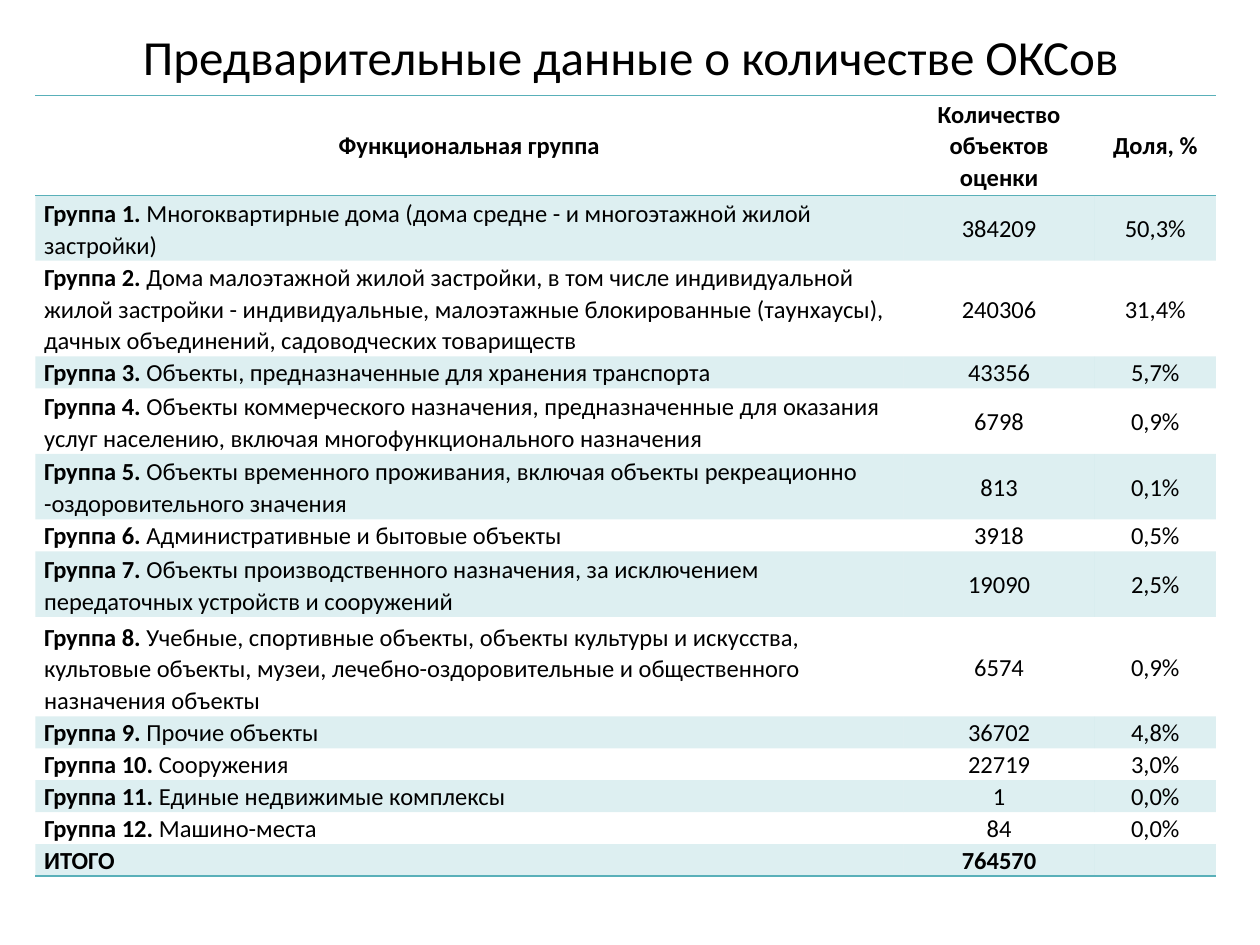
from lxml import etree
from pptx import Presentation
from pptx.dml.color import RGBColor
from pptx.enum.text import MSO_ANCHOR, PP_ALIGN
from pptx.oxml.ns import qn
from pptx.util import Inches, Pt

CENTER, LEFT = PP_ALIGN.CENTER, PP_ALIGN.LEFT
MIDDLE, BOTTOM = MSO_ANCHOR.MIDDLE, MSO_ANCHOR.BOTTOM
COLORS = {"text": "000000", "accent": "59B0B9"}
PLAIN_TABLE_STYLE = "{2D5ABB26-0587-4C30-8999-92F81FD0307C}"
TITLE_ONLY = 5

COLUMN_WIDTHS = [6.89, 1.52, 0.96]
HEADINGS = ["Функциональная группа", "Количество объектов оценки", "Доля, %"]
HEADING_HEIGHT = 0.79
ROW_HEIGHT = 0.25
GROUPS = [
    ("Многоквартирные дома (дома средне - и многоэтажной жилой застройки)", "384209", "50,3%", 0.52),
    ("Дома малоэтажной жилой застройки, в том числе индивидуальной жилой застройки - "
     "индивидуальные, малоэтажные блокированные (таунхаусы), дачных объединений, "
     "садоводческих товариществ", "240306", "31,4%", 0.76),
    ("Объекты, предназначенные для хранения транспорта", "43356", "5,7%", ROW_HEIGHT),
    ("Объекты коммерческого назначения, предназначенные для оказания услуг населению, "
     "включая многофункционального назначения", "6798", "0,9%", 0.52),
    ("Объекты временного проживания, включая объекты рекреационно -оздоровительного значения",
     "813", "0,1%", 0.52),
    ("Административные и бытовые объекты", "3918", "0,5%", ROW_HEIGHT),
    ("Объекты производственного назначения, за исключением передаточных устройств и сооружений",
     "19090", "2,5%", 0.52),
    ("Учебные, спортивные объекты, объекты культуры и искусства, культовые объекты, музеи, "
     "лечебно-оздоровительные и общественного назначения объекты", "6574", "0,9%", 0.79),
    ("Прочие объекты", "36702", "4,8%", ROW_HEIGHT),
    ("Сооружения", "22719", "3,0%", ROW_HEIGHT),
    ("Единые недвижимые комплексы", "1", "0,0%", ROW_HEIGHT),
    ("Машино-места", "84", "0,0%", ROW_HEIGHT),
]


class PageBuilder:
    font = "Calibri"
    title_size = 28
    table_size = 14

    def __init__(self, page):
        self.page = page

    def add_span(self, para, text, size, bold=False):
        span = para.add_run()
        span.text = text
        span.font.name = self.font
        span.font.size = Pt(size)
        span.font.bold = bold
        span.font.color.rgb = RGBColor.from_string(COLORS["text"])

    def add_title(self, text, left, top, width, height):
        box = self.page.shapes.title
        box.left, box.top = Inches(left), Inches(top)
        box.width, box.height = Inches(width), Inches(height)
        box.text_frame.vertical_anchor = MIDDLE
        para = box.text_frame.paragraphs[0]
        para.alignment = CENTER
        self.add_span(para, text, self.title_size)

    def add_table(self, left, top, widths, heights):
        frame = self.page.shapes.add_table(
            len(heights), len(widths), Inches(left), Inches(top),
            Inches(sum(widths)), Inches(sum(heights)))
        table = frame.table
        table.first_row = table.horz_banding = False
        frame._element.find(".//" + qn("a:tableStyleId")).text = PLAIN_TABLE_STYLE
        for column, width in zip(table.columns, widths):
            column.width = Inches(width)
        for row, height in zip(table.rows, heights):
            row.height = Inches(height)
        return table

    def fill_cell(self, cell, spans, align=CENTER, anchor=MIDDLE, shaded=False, borders=()):
        cell.margin_left = cell.margin_right = Inches(0.07)
        cell.margin_top = cell.margin_bottom = 0
        cell.vertical_anchor = anchor
        para = cell.text_frame.paragraphs[0]
        para.alignment = align
        para.line_spacing = 1.07
        for text, bold in spans:
            self.add_span(para, text, self.table_size, bold)
        if not spans:
            etree.SubElement(para._p, qn("a:endParaRPr"), sz=str(self.table_size * 100))
        for side in borders:
            self.add_border(cell, side)
        if shaded:
            cell.fill.solid()
            cell.fill.fore_color.rgb = RGBColor.from_string(COLORS["accent"])
            color = cell._tc.tcPr.find(".//" + qn("a:solidFill") + "[last()]/" + qn("a:srgbClr"))
            for fill in cell._tc.tcPr.findall(qn("a:solidFill")):
                color = fill.find(qn("a:srgbClr"))
            etree.SubElement(color, qn("a:alpha"), val="20000")
        else:
            cell.fill.background()

    def add_border(self, cell, side):
        line = etree.SubElement(cell._tc.get_or_add_tcPr(), qn("a:ln" + side), w=str(Pt(1)))
        fill = etree.SubElement(line, qn("a:solidFill"))
        etree.SubElement(fill, qn("a:srgbClr"), val=COLORS["accent"])


def main():
    deck = Presentation()
    deck.slide_width, deck.slide_height = Inches(10), Inches(7.5)
    builder = PageBuilder(deck.slides.add_slide(deck.slide_layouts[TITLE_ONLY]))
    builder.add_title("Предварительные данные о количестве ОКСов", 0.28, -0.19, 9.45, 1.26)

    heights = [HEADING_HEIGHT] + [group[-1] for group in GROUPS] + [ROW_HEIGHT]
    table = builder.add_table(0.28, 0.76, COLUMN_WIDTHS, heights)
    for column, heading in enumerate(HEADINGS):
        builder.fill_cell(table.cell(0, column), [(heading, True)], borders="TB")

    rows = [([(f"Группа {number}. ", True), (name, False)], [(count, False)], [(share, False)])
            for number, (name, count, share, _) in enumerate(GROUPS, 1)]
    rows.append(([("ИТОГО", True)], [("764570", True)], []))
    for number, row in enumerate(rows, 1):
        borders = "B" if number == len(rows) else ""
        for column, spans in enumerate(row):
            align, anchor = (CENTER, MIDDLE) if column else (LEFT, BOTTOM)
            builder.fill_cell(table.cell(number, column), spans, align, anchor,
                              number % 2 == 1, borders)
    deck.save("out.pptx")


if __name__ == "__main__":
    main()
